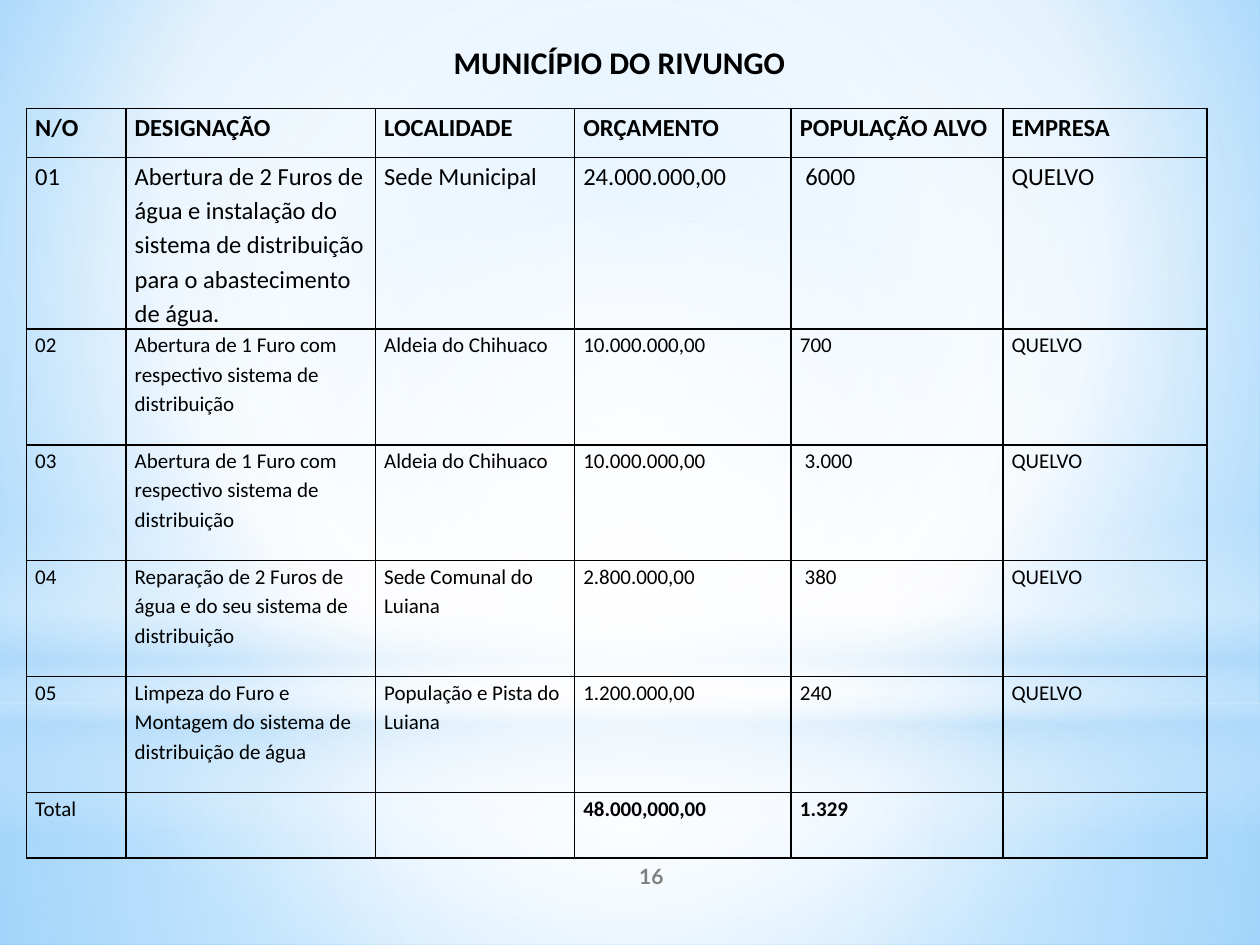
from lxml import etree
from pptx import Presentation
from pptx.dml.color import RGBColor
from pptx.enum.shapes import MSO_SHAPE
from pptx.enum.text import MSO_ANCHOR, PP_ALIGN
from pptx.oxml.ns import qn
from pptx.util import Inches, Pt

RECTANGLE, OVAL = MSO_SHAPE.RECTANGLE, MSO_SHAPE.OVAL
LEFT, CENTER = PP_ALIGN.LEFT, PP_ALIGN.CENTER
MIDDLE = MSO_ANCHOR.MIDDLE

BLACK, GREY, WHITE, PALE_BLUE = "000000", "808080", "FFFFFF", "B4DCFA"
MIDPOINT = (50, 50, 50, 50)
SKY = [(0, "9ED5FF", 100), (60, WHITE, 100), (100, "5BB9FF", 100)]
LIGHT_LAYERS = [
    (RECTANGLE, (0, 5.58, 10, 1.92),
     [(0, WHITE, 91), (37, WHITE, 76), (100, PALE_BLUE, 79)], MIDPOINT),
    (RECTANGLE, (0, 0, 10, 5.58),
     [(0, WHITE, 89), (48, WHITE, 62), (100, PALE_BLUE, 79)], MIDPOINT),
    (RECTANGLE, (0, 4.12, 10, 2.5),
     [(0, WHITE, 0), (29, WHITE, 30), (45, PALE_BLUE, 40),
      (55, WHITE, 26), (65, PALE_BLUE, 60), (100, WHITE, 0)], None),
    (OVAL, (0, 1.75, 10, 5.58), [(0, WHITE, 100), (56, WHITE, 0)], MIDPOINT),
]

COMPANY = "QUELVO"
COLUMN_WIDTHS = [0.79, 1.98, 1.58, 1.72, 1.68, 1.62]
ROW_HEIGHTS = [0.39, 1.34, 0.92, 0.92, 0.92, 0.92, 0.52]
WORKS = [
    ["N/O", "DESIGNAÇÃO", "LOCALIDADE", "ORÇAMENTO", "POPULAÇÃO ALVO", "EMPRESA"],
    ["01", "Abertura de 2 Furos de água e instalação do sistema de distribuição "
     "para o abastecimento de água.", "Sede Municipal", "24.000.000,00", " 6000", COMPANY],
    ["02", "Abertura de 1 Furo com respectivo sistema de distribuição",
     "Aldeia do Chihuaco", "10.000.000,00", "700", COMPANY],
    ["03", "Abertura de 1 Furo com respectivo sistema de distribuição",
     "Aldeia do Chihuaco", "10.000.000,00", " 3.000", COMPANY],
    ["04", "Reparação de 2 Furos de água e do seu sistema de distribuição",
     "Sede Comunal do Luiana", "2.800.000,00", " 380", COMPANY],
    ["05", "Limpeza do Furo e Montagem do sistema de distribuição de água",
     "População e Pista do Luiana", "1.200.000,00", "240", COMPANY],
    ["Total", "", "", "48.000,000,00", "1.329", ""],
]


def rgb(color):
    """Turn a hex string into a colour."""
    return RGBColor.from_string(color)


def write(frame, text, size=12, font="Calibri", color=BLACK, bold=False,
          align=LEFT, spacing=1.0):
    """Put one formatted paragraph into a text frame."""
    frame.word_wrap = True
    paragraph = frame.paragraphs[0]
    paragraph.alignment = align
    paragraph.line_spacing = spacing
    run = paragraph.add_run()
    run.text = text
    run.font.size = Pt(size)
    run.font.name = font
    run.font.bold = bold
    run.font.color.rgb = rgb(color)


def apply_gradient(properties, stops, focus=None):
    """Replace a solid fill by a circular gradient, or a vertical one without focus."""
    gradient = etree.Element(qn("a:gradFill"), rotWithShape="1")
    stop_list = etree.SubElement(gradient, qn("a:gsLst"))
    for position, color, opacity in stops:
        stop = etree.SubElement(stop_list, qn("a:gs"), pos=str(position * 1000))
        tint = etree.SubElement(stop, qn("a:srgbClr"), val=color)
        etree.SubElement(tint, qn("a:alpha"), val=str(opacity * 1000))
    if focus:
        circle = etree.SubElement(gradient, qn("a:path"))
        circle.set("path", "circle")
        edges = {side: str(inset * 1000) for side, inset in zip("ltrb", focus)}
        etree.SubElement(circle, qn("a:fillToRect"), edges)
    else:
        etree.SubElement(gradient, qn("a:lin"), ang="5400000", scaled="0")
    properties.replace(properties.find(qn("a:solidFill")), gradient)


def add_backdrop(slide):
    """Draw the sky gradient and the translucent light layers."""
    slide.background.fill.solid()
    apply_gradient(slide.background._cSld.bg.bgPr, SKY, (20, 10, 20, 60))
    for outline, box, stops, focus in LIGHT_LAYERS:
        layer = slide.shapes.add_shape(outline, *map(Inches, box))
        layer.shadow.inherit = False
        layer.line.fill.background()
        layer.fill.solid()
        apply_gradient(layer._element.spPr, stops, focus)


def add_borders(cell):
    """Give a cell thin black lines on all four sides."""
    properties = cell._tc.get_or_add_tcPr()
    for index, side in enumerate(("lnL", "lnR", "lnT", "lnB")):
        border = etree.Element(qn(f"a:{side}"), w=str(Pt(1)))
        fill = etree.SubElement(border, qn("a:solidFill"))
        etree.SubElement(fill, qn("a:srgbClr"), val=BLACK)
        properties.insert(index, border)


def add_works_table(slide):
    """Add the table of water works."""
    table = slide.shapes.add_table(
        len(WORKS), len(COLUMN_WIDTHS), Inches(0.21), Inches(0.86),
        Inches(sum(COLUMN_WIDTHS)), Inches(sum(ROW_HEIGHTS))).table
    table.first_row = table.horz_banding = False
    for column, width in zip(table.columns, COLUMN_WIDTHS):
        column.width = Inches(width)
    for index, (row, height, texts) in enumerate(zip(table.rows, ROW_HEIGHTS, WORKS)):
        row.height = Inches(height)
        is_total = index == len(WORKS) - 1
        for cell, text in zip(row.cells, texts):
            cell.fill.background()
            add_borders(cell)
            cell.margin_left = cell.margin_right = Inches(0.07)
            cell.margin_top = cell.margin_bottom = 0
            if text:
                write(cell.text_frame, text, size=14 if index < 2 else 12, spacing=1.15,
                      bold=index == 0 or (is_total and text != "Total"))


def add_title(slide, text):
    """Place the title in front of the backdrop."""
    title = slide.shapes.title
    title.left, title.top, title.width, title.height = map(Inches, (2.22, 0.29, 4.5, 0.4))
    title.text_frame.margin_left = Inches(1.38)
    title.text_frame.vertical_anchor = MIDDLE
    write(title.text_frame, text, size=18, bold=True)
    slide.shapes._spTree.append(title._element)


def add_page_number(slide, number):
    """Add the page number below the table."""
    frame = slide.shapes.add_textbox(*map(Inches, (4.17, 6.75, 2, 0.4))).text_frame
    frame.vertical_anchor = MIDDLE
    write(frame, number, font="Lato", color=GREY, bold=True, align=CENTER)


def main():
    """Build and save the slide."""
    presentation = Presentation()
    presentation.slide_width, presentation.slide_height = Inches(10), Inches(7.5)
    slide = presentation.slides.add_slide(presentation.slide_layouts[5])
    add_backdrop(slide)
    add_works_table(slide)
    add_title(slide, "MUNICÍPIO DO RIVUNGO")
    add_page_number(slide, "16")
    presentation.save("out.pptx")


if __name__ == "__main__":
    main()
